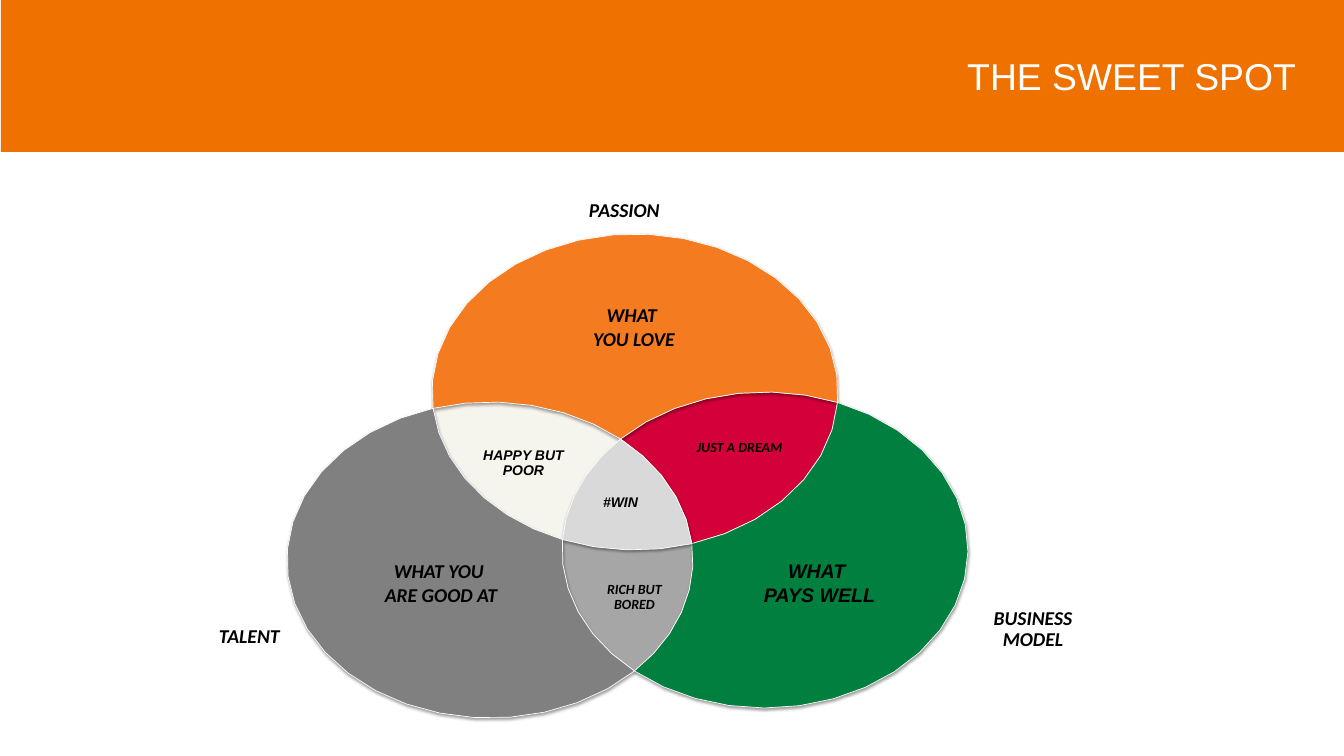
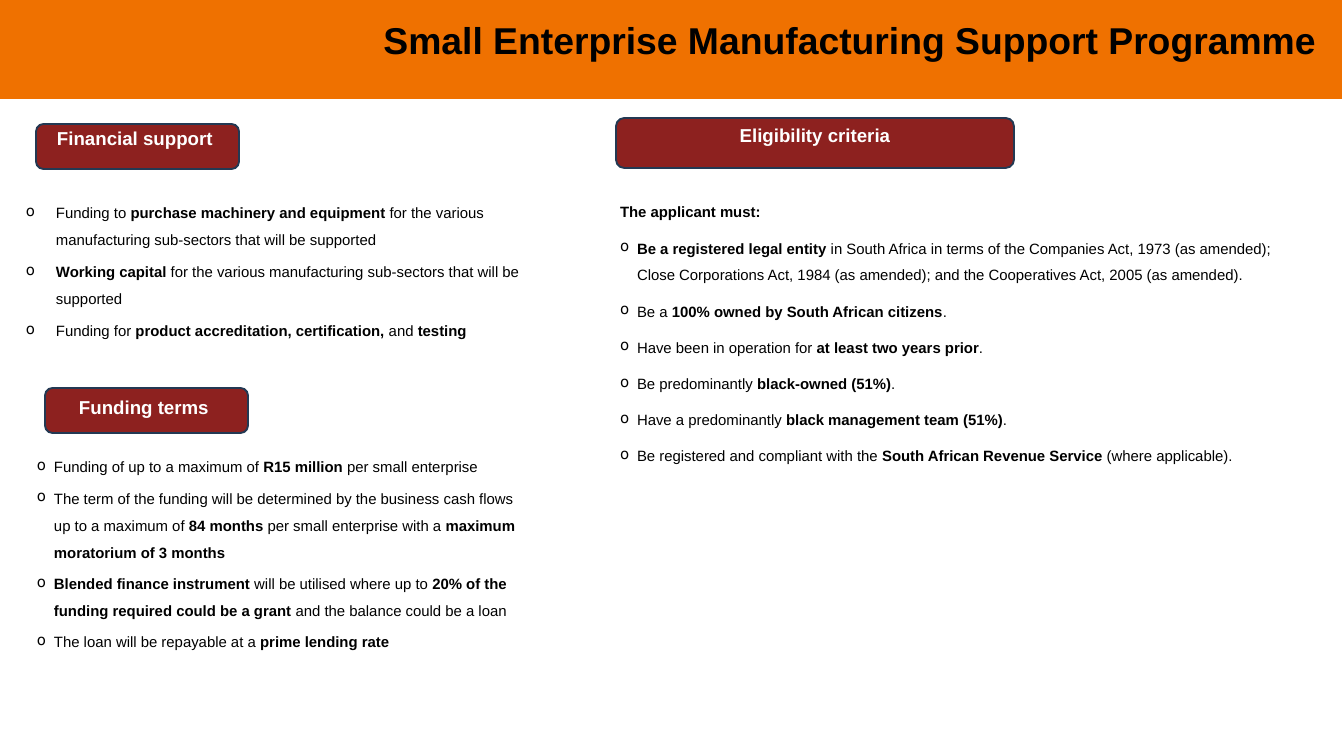
import dataclasses
import math

import lxml.etree
import pptx
import pptx.dml.color
import pptx.enum.shapes
import pptx.enum.text
import pptx.oxml
import pptx.oxml.ns
import pptx.util

UNIT = 914400 / 67.2
SHAPE = pptx.enum.shapes.MSO_SHAPE
ALIGN = pptx.enum.text.PP_ALIGN
ANCHOR = pptx.enum.text.MSO_ANCHOR


@dataclasses.dataclass(frozen=True)
class Theme:
    orange: str = "EF7100"
    black: str = "000000"
    white: str = "FFFFFF"
    maroon: str = "8D211F"
    navy: str = "233953"
    love: str = "F47B20"
    skill: str = "808080"
    pay: str = "007F3E"
    dream: str = "D40039"
    happy: str = "F5F4ED"
    rich: str = "A6A6A6"
    win: str = "D9D9D9"
    font: str = "Arial"
    label: str = "Calibri"
    title: int = 40
    large: int = 21
    head: int = 20
    body: int = 16
    small: int = 15


LOOK = Theme()

WIDE, HIGH = 203, 158
STEP = math.radians(10)
OVALS = {"T": (635, 392), "L": (490, 560), "R": (765, 550)}
ZONES = [
    (LOOK.dream, "R+cB T+Ba L-ac"),
    (LOOK.happy, "L+Ac R-cb T+bA"),
    (LOOK.rich, "T-ba L+aC R+Cb"),
    (LOOK.love, "T+AB R-Bc L-cA"),
    (LOOK.pay, "R+BC L-Ca T-aB"),
    (LOOK.win, "L+ca T+ab R+bc"),
    (LOOK.skill, "L+CA T-Ab R-bC"),
]
TAGS = [
    ("PASSION", (579, 171, 111, 81), LOOK.label, LOOK.large, ALIGN.LEFT),
    ("TALENT", (209, 597, 111, 81), LOOK.label, LOOK.large, ALIGN.LEFT),
    ("BUSINESS MODEL", (968, 589, 130, 81), LOOK.label, LOOK.large, ALIGN.CENTER),
    ("HAPPY BUT POOR", (468, 423, 111, 81), LOOK.font, LOOK.small, ALIGN.CENTER),
    ("JUST A DREAM", (684, 407, 111, 81), LOOK.label, LOOK.small, ALIGN.CENTER),
    ("RICH BUT BORED", (579, 557, 111, 81), LOOK.label, LOOK.small, ALIGN.CENTER),
    ("#WIN", (565, 462, 111, 81), LOOK.font, LOOK.small, ALIGN.CENTER),
]
CORES = [
    (["WHAT YOU ", "ARE GOOD AT"], (376, 556, 130, 54), LOOK.label),
    (["WHAT ", "PAYS WELL"], (755, 556, 129, 54), LOOK.font),
    (["WHAT ", "YOU LOVE"], (585, 300, 98, 54), LOOK.label),
]
PILLS = [
    ("Financial support ", (36, 124, 203, 45), 1),
    ("Funding terms ", (45, 388, 203, 45), 6),
    ("Eligibility criteria", (616, 118, 398, 50), 3),
]
SUPPORT = [
    "Funding to *purchase machinery and equipment* for the various "
    "manufacturing sub-sectors that will be supported",
    "*Working capital* for the various manufacturing sub-sectors that will be supported",
    "Funding for *product accreditation, certification,* and *testing*",
]
TERMS = [
    "Funding of up to a maximum of *R15 million* per small enterprise",
    "The term of the funding will be determined by the business cash flows up to "
    "a maximum of *84 months* per small enterprise with a *maximum moratorium of 3 months*",
    "*Blended finance instrument* will be utilised where up to *20% of the funding "
    "required could be a grant* and the balance could be a loan",
    "The loan will be repayable at a *prime lending rate*",
]
RULES = [
    "*The applicant must:*",
    "*Be a registered legal entity* in South Africa in terms of the Companies Act, 1973 "
    "(as amended); Close Corporations Act, 1984 (as amended); and the Cooperatives Act, "
    "2005 (as amended).",
    "Be a *100% owned by South African citizens*.",
    "Have been in operation for *at least two years prior*.",
    "Be predominantly *black-owned (51%)*.",
    "Have a predominantly *black management team (51%)*.",
    "Be registered and compliant with the *South African Revenue Service* (where applicable).",
]


def px(size):
    return pptx.util.Emu(round(size * UNIT))


def tint(code):
    return pptx.dml.color.RGBColor.from_string(code)


def paint(shape, fill, line=None, width=0):
    shape.shadow.inherit = False
    shape.fill.solid()
    shape.fill.fore_color.rgb = tint(fill)
    if line:
        shape.line.color.rgb = tint(line)
        shape.line.width = pptx.util.Pt(width)
    else:
        shape.line.fill.background()


def bullet(para, left, hang):
    props = para._p.get_or_add_pPr()
    props.set("marL", str(px(left)))
    props.set("indent", str(px(-hang)))
    color = lxml.etree.SubElement(props, pptx.oxml.ns.qn("a:buClr"))
    lxml.etree.SubElement(color, pptx.oxml.ns.qn("a:srgbClr"), val=LOOK.black)
    lxml.etree.SubElement(props, pptx.oxml.ns.qn("a:buChar"), char="o")


def text(shape, lines, font=LOOK.font, size=LOOK.body, color=LOOK.black, bold=False,
         slant=False, align=ALIGN.LEFT, anchor=ANCHOR.TOP, inset=(7, 3, 7, 3),
         wrap=True, space=None, gap=0, indent=None, plain=0):
    frame = shape.text_frame
    frame.word_wrap = wrap
    frame.vertical_anchor = anchor
    (frame.margin_left, frame.margin_top,
     frame.margin_right, frame.margin_bottom) = map(px, inset)
    for row, line in enumerate(lines):
        para = frame.add_paragraph() if row else frame.paragraphs[0]
        para.alignment = align
        if space:
            para.line_spacing = space
        if row and gap:
            para.space_before = pptx.util.Pt(gap)
        if indent and row >= plain:
            bullet(para, *indent)
        for turn, part in enumerate(line.split("*")):
            if part:
                run = para.add_run()
                run.text = part
                run.font.name = font
                run.font.size = pptx.util.Pt(size)
                run.font.color.rgb = tint(color)
                run.font.bold = bold or turn % 2 == 1
                run.font.italic = slant


def note(slide, lines, box, **form):
    text(slide.shapes.add_textbox(*map(px, box)), lines, **form)


def band(slide, box):
    paint(slide.shapes.add_shape(SHAPE.RECTANGLE, *map(px, box)), LOOK.orange)


def title(slide, words, box, **form):
    note(slide, [words], box, size=LOOK.title, align=ALIGN.RIGHT, **form)


def pill(slide, words, box, top):
    shape = slide.shapes.add_shape(SHAPE.ROUNDED_RECTANGLE, *map(px, box))
    paint(shape, LOOK.maroon, LOOK.navy, 2)
    text(shape, [words], size=LOOK.head, color=LOOK.white, bold=True,
         align=ALIGN.CENTER, inset=(7, top, 7, 0))


def cross(one, two):
    ratio = WIDE / HIGH
    (ax, ay), (bx, by) = OVALS[one], OVALS[two]
    dx, dy = bx - ax, (by - ay) * ratio
    dist = math.hypot(dx, dy)
    reach = math.sqrt(WIDE ** 2 - dist ** 2 / 4) / dist
    return [((ax + bx) / 2 - side * reach * dy,
             (ay + by) / 2 + side * reach * dx / ratio) for side in (1, -1)]


def arc(oval, sign, start, end):
    cx, cy = OVALS[oval]
    first, last = (math.atan2((y - cy) / HIGH, (x - cx) / WIDE) for x, y in (start, end))
    sweep = (last - first) % math.tau
    if sign == "-":
        sweep -= math.tau
    count = math.ceil(abs(sweep) / STEP)
    turns = [first + sweep * step / count for step in range(count)]
    return [(px(cx + WIDE * math.cos(turn)), px(cy + HIGH * math.sin(turn)))
            for turn in turns]


def shade(shape):
    effects = shape._element.spPr.find(pptx.oxml.ns.qn("a:effectLst"))
    effects.append(pptx.oxml.parse_xml(
        f'<a:outerShdw {pptx.oxml.ns.nsdecls("a")} blurRad="40000" dist="20000" '
        f'dir="5400000" rotWithShape="0"><a:srgbClr val="{LOOK.black}">'
        '<a:alpha val="38000"/></a:srgbClr></a:outerShdw>'))


def venn(slide):
    spots = {}
    for outer, pair in zip("ABC", ("TL", "RT", "LR")):
        spots[outer], spots[outer.lower()] = cross(*pair)
    for color, route in ZONES:
        dots = [dot for oval, sign, start, end in route.split()
                for dot in arc(oval, sign, spots[start], spots[end])]
        draft = slide.shapes.build_freeform(*dots[0], scale=1.0)
        draft.add_line_segments(dots[1:], close=True)
        shape = draft.convert_to_shape()
        paint(shape, color, LOOK.white, 0.75)
        shade(shape)


def sweet(slide):
    venn(slide)
    for words, box, font, size, align in TAGS:
        note(slide, [words], box, font=font, size=size, bold=True, slant=True,
             align=align, anchor=ANCHOR.MIDDLE, inset=(10, 5, 10, 5), space=0.9)
    for lines, box, font in CORES:
        note(slide, lines, box, font=font, size=LOOK.large, bold=True, slant=True,
             align=ALIGN.CENTER, wrap=False)
    band(slide, (1, 0, 1343, 152))
    title(slide, "THE SWEET SPOT", (330, 53, 966, 45), color=LOOK.white,
          inset=(0, 0, 0, 0))


def support(slide):
    band(slide, (-1, -20, 1343, 119))
    title(slide, "Small Enterprise Manufacturing Support Programme",
          (45, -9, 1278, 97), bold=True, anchor=ANCHOR.MIDDLE)
    for words, box, top in PILLS:
        pill(slide, words, box, top)
    form = {"space": 1.5, "inset": (10, 5, 10, 5)}
    note(slide, SUPPORT, (-21, 190, 559, 186), gap=5.6, indent=(67, 30), **form)
    note(slide, RULES, (610, 189, 679, 477), gap=10, indent=(17, 17), plain=1, **form)
    form["inset"] = (10, 27, 10, 5)
    note(slide, TERMS, (-6, 422, 536, 334), gap=5, indent=(50, 17), **form)


def main():
    deck = pptx.Presentation()
    deck.slide_width, deck.slide_height = px(1344), px(756)
    for build in (sweet, support):
        build(deck.slides.add_slide(deck.slide_layouts[6]))
    deck.save("out.pptx")


if __name__ == "__main__":
    main()
